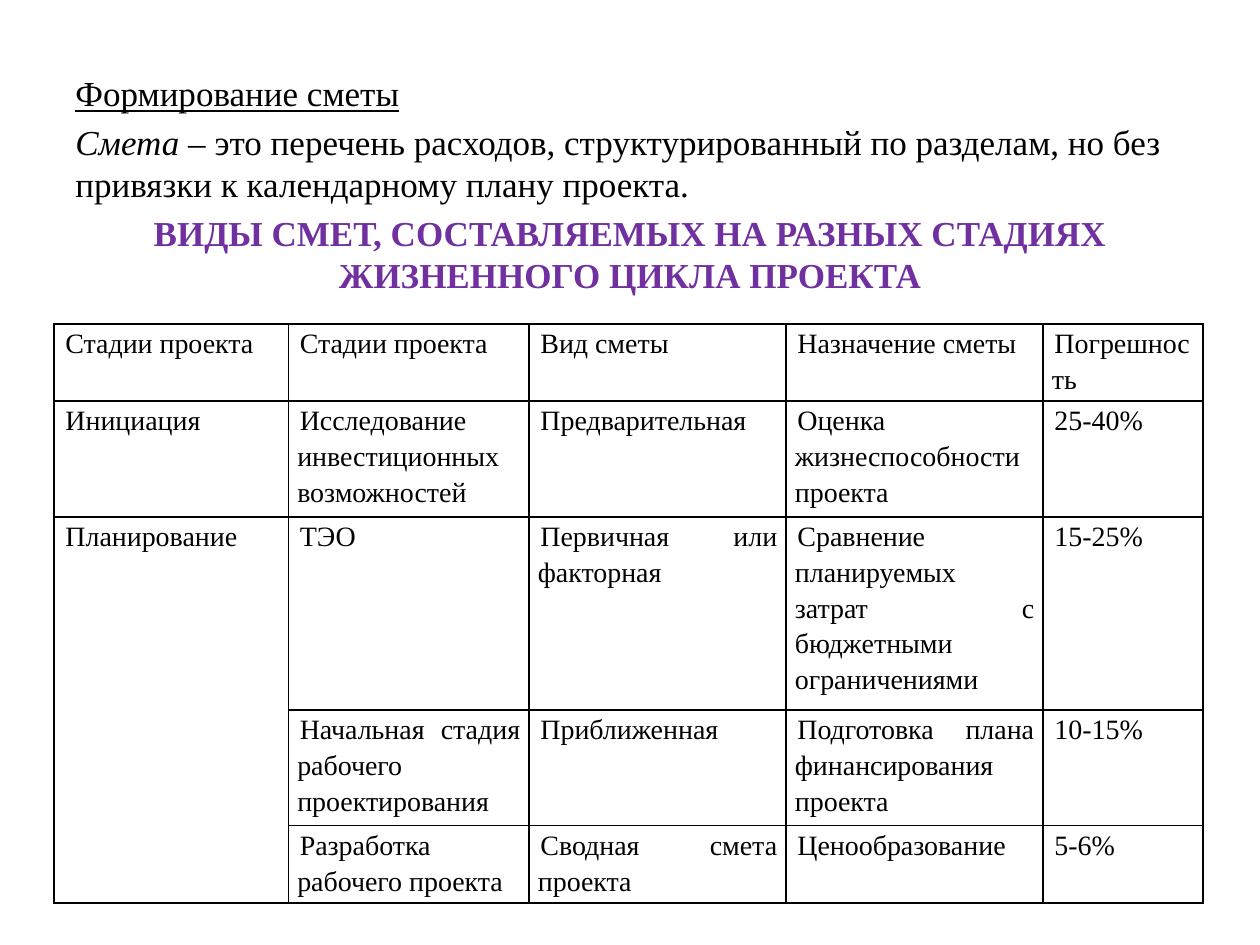
"""Build the slide on project cost estimates and their kinds at each stage."""
from lxml import etree
from pptx import Presentation
from pptx import util as u
from pptx.dml import color
from pptx.enum import text
from pptx.oxml import ns

COLORS = {"ink": "000000", "accent": "7030A0"}
FONT = "Times New Roman"


def add_span(para, words, size, ink="ink", **formats):
    span = para.add_run()
    span.text = words
    for name, value in {"name": FONT, "size": u.Pt(size), **formats}.items():
        setattr(span.font, name, value)
    span.font.color.rgb = color.RGBColor.from_string(COLORS[ink])


def add_borders(cell):
    properties = cell._tc.get_or_add_tcPr()
    for side in ("lnL", "lnR", "lnT", "lnB"):
        line = etree.SubElement(properties, ns.qn(f"a:{side}"), w=str(u.Pt(1)))
        fill = etree.SubElement(line, ns.qn("a:solidFill"))
        etree.SubElement(fill, ns.qn("a:srgbClr"), val=COLORS["ink"])


deck = Presentation()
deck.slide_width, deck.slide_height = u.Inches(10), u.Inches(7.5)
page = deck.slides.add_slide(deck.slide_layouts[6])

intro = [
    (text.PP_ALIGN.LEFT, [("Формирование сметы", {"underline": True})]),
    (text.PP_ALIGN.LEFT, [
        ("Смета", {"italic": True}),
        (" – это перечень расходов, структурированный по разделам, "
         "но без привязки к календарному плану проекта.", {}),
    ]),
    (text.PP_ALIGN.CENTER, [
        ("ВИДЫ СМЕТ, СОСТАВЛЯЕМЫХ НА РАЗНЫХ СТАДИЯХ ЖИЗНЕННОГО ЦИКЛА ПРОЕКТА",
         {"ink": "accent", "bold": True}),
    ]),
]
box = page.shapes.add_textbox(u.Inches(0.5), u.Inches(0.52), u.Inches(9), u.Inches(1.73))
frame = box.text_frame
frame.word_wrap = True
for index, (alignment, spans) in enumerate(intro):
    para = frame.add_paragraph() if index else frame.paragraphs[0]
    para.alignment = alignment
    para.space_before = u.Pt(4)
    for words, formats in spans:
        add_span(para, words, 20, **formats)

rows = [
    ["Стадии проекта", "Стадии проекта", "Вид сметы", "Назначение сметы", "Погрешность"],
    ["Инициация", "Исследование инвестиционных возможностей ", "Предварительная",
     "Оценка жизнеспособности проекта", "25-40%"],
    ["Планирование", "ТЭО", "Первичная или факторная",
     "Сравнение планируемых затрат с бюджетными ограничениями", "15-25%"],
    ["", "Начальная стадия рабочего проектирования", "Приближенная",
     "Подготовка плана финансирования проекта", "10-15%"],
    ["", "Разработка рабочего проекта", "Сводная смета проекта", "Ценообразование", "5-6%"],
]
widths = [1.86, 1.91, 2.04, 2.04, 1.27]
heights = [0.61, 0.91, 1.52, 0.91, 0.61]
table = page.shapes.add_table(
    len(rows), len(widths), u.Inches(0.43), u.Inches(2.57),
    u.Inches(sum(widths)), u.Inches(sum(heights))).table
table.first_row = table.horz_banding = False
for column, width in zip(table.columns, widths):
    column.width = u.Inches(width)
for row, height, entries in zip(table.rows, heights, rows):
    row.height = u.Inches(height)
    for cell, words in zip(row.cells, entries):
        add_borders(cell)
        cell.fill.background()
        cell.margin_left = cell.margin_right = u.Inches(0.07)
        cell.margin_top = cell.margin_bottom = 0
        para = cell.text_frame.paragraphs[0]
        para.alignment = text.PP_ALIGN.JUSTIFY
        para.line_spacing = 1.15
        para._p.get_or_add_pPr().set("indent", str(u.Inches(0.02)))
        if words:
            add_span(para, words, 16)
table.cell(2, 0).merge(table.cell(4, 0))

deck.save("out.pptx")
